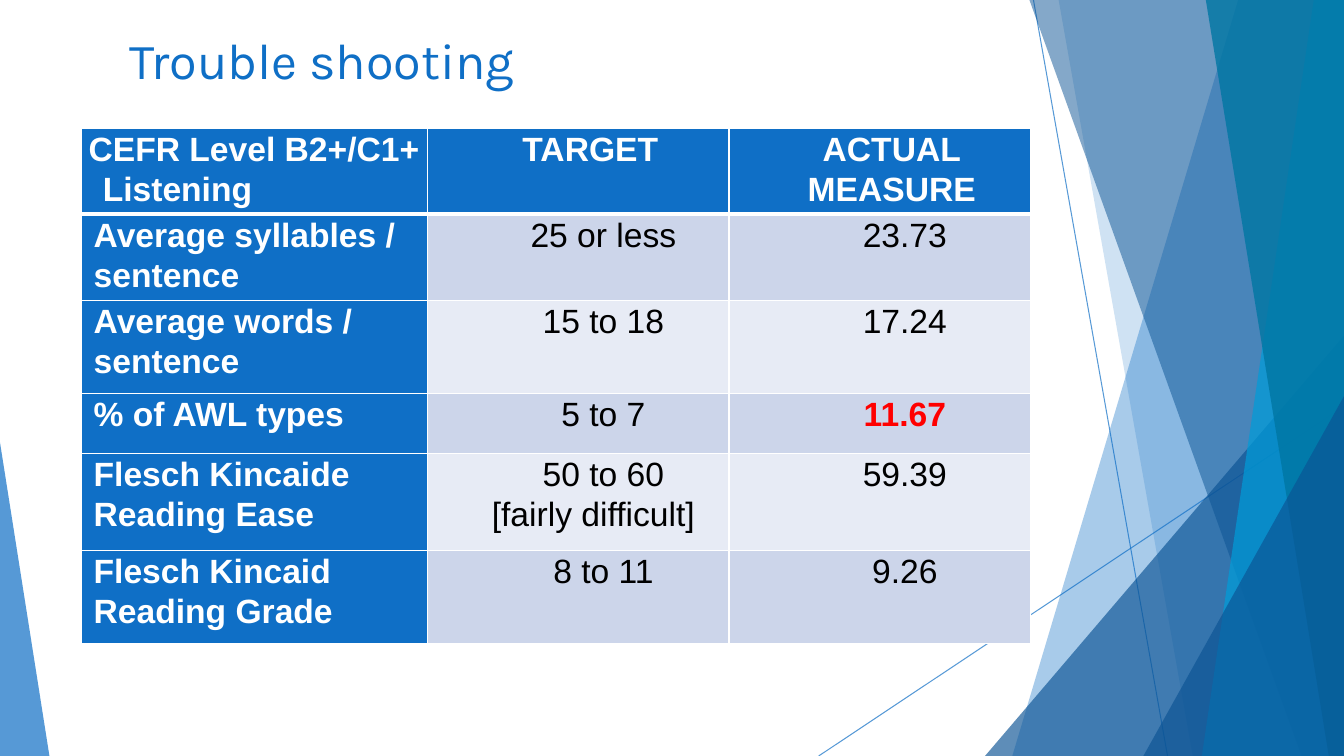
from dataclasses import dataclass

from lxml import etree
from pptx import Presentation
from pptx import util as u
from pptx.dml.color import RGBColor
from pptx.enum import shapes, text
from pptx.oxml import ns


@dataclass(frozen=True)
class Theme:
    """Colours, fonts and type sizes of the slide."""
    blue: str = "0F6FC6"
    navy: str = "0B5394"
    cyan: str = "009DD9"
    teal: str = "0076A3"
    white: str = "FFFFFF"
    black: str = "000000"
    alert: str = "FF0000"
    bands: tuple = ("CCD5EA", "E7EBF5")
    title_font: str = "Karla"
    table_font: str = "Arial"
    title_size: int = 36
    table_size: int = 24
    line_spacing: float = 1.07


class SlideBuilder:
    """Draws styled elements on one slide."""

    def __init__(self, theme, slide, width, height):
        self.theme, self.slide = theme, slide
        self.width, self.height = width, height

    def set_alpha(self, element, percent):
        """Make the solid colour inside an element see-through."""
        colour = element.find(".//" + ns.qn("a:srgbClr"))
        etree.SubElement(colour, ns.qn("a:alpha"), val=str(percent * 1000))

    def paint(self, shape, colour, alpha):
        """Give a shape a see-through fill and no outline."""
        shape.shadow.inherit = False
        shape.fill.solid()
        shape.fill.fore_color.rgb = RGBColor.from_string(colour)
        shape.line.fill.background()
        self.set_alpha(shape.fill._xPr, alpha)

    def ray(self, start, end):
        """Draw a thin line."""
        ends = [u.Inches(value) for value in (*start, *end)]
        ray = self.slide.shapes.add_connector(shapes.MSO_CONNECTOR.STRAIGHT, *ends)
        ray.line.width = u.Pt(0.75)
        ray.line.color.rgb = RGBColor.from_string(self.theme.blue)
        self.set_alpha(ray.line._ln, 70)
        etree.SubElement(ray._element.spPr, ns.qn("a:effectLst"))

    def facet(self, top_left, bottom_left, colour, alpha):
        """Fill the area from a slanted left edge to the slide's right edge."""
        corners = [(top_left, 0), (self.width, 0),
                   (self.width, self.height), (bottom_left, self.height)]
        points = [(u.Inches(x), u.Inches(y)) for x, y in corners]
        outline = self.slide.shapes.build_freeform(*points[0])
        outline.add_line_segments(points[1:], close=True)
        self.paint(outline.convert_to_shape(), colour, alpha)

    def wedge(self, left, top, width, apex, colour, alpha):
        """Draw a triangle standing on the bottom edge."""
        wedge = self.slide.shapes.add_shape(
            shapes.MSO_SHAPE.ISOSCELES_TRIANGLE, u.Inches(left), u.Inches(top),
            u.Inches(width), u.Inches(self.height - top))
        wedge.adjustments[0] = apex
        self.paint(wedge, colour, alpha)

    def style_font(self, paragraph, name, size, colour, bold=False):
        """Set the font of a paragraph."""
        font = paragraph.font
        font.name, font.size, font.bold = name, u.Pt(size), bold
        font.color.rgb = RGBColor.from_string(colour)

    def title(self, words, left, top, width, height):
        """Write the heading."""
        heading = self.slide.shapes.add_textbox(
            *(u.Inches(value) for value in (left, top, width, height)))
        heading.text_frame.word_wrap = True
        heading.text_frame.text = words
        self.style_font(heading.text_frame.paragraphs[0], self.theme.title_font,
                        self.theme.title_size, self.theme.blue)

    def borders(self, cell, bottom):
        """Draw white borders round a cell."""
        properties = cell._tc.get_or_add_tcPr()
        for index, side in enumerate("LRTB"):
            width = u.Pt(bottom if side == "B" else 1)
            edge = etree.Element(ns.qn(f"a:ln{side}"), w=str(width))
            fill = etree.SubElement(edge, ns.qn("a:solidFill"))
            etree.SubElement(fill, ns.qn("a:srgbClr"), val=self.theme.white)
            properties.insert(index, edge)

    def cell(self, cell, lines, fill, colour, bold, centred, bottom):
        """Fill one cell with lines of (words, indent)."""
        cell.margin_left = cell.margin_right = u.Inches(0.07)
        cell.margin_top = cell.margin_bottom = 0
        cell.fill.solid()
        cell.fill.fore_color.rgb = RGBColor.from_string(fill)
        self.borders(cell, bottom)
        cell.text_frame.text = "\n".join(words for words, _ in lines)
        for paragraph, (_, indent) in zip(cell.text_frame.paragraphs, lines):
            paragraph.line_spacing = self.theme.line_spacing
            paragraph.alignment = text.PP_ALIGN.CENTER if centred else text.PP_ALIGN.LEFT
            margins = paragraph._p.get_or_add_pPr()
            margins.set("marL", str(u.Inches(indent)))
            margins.set("indent", "0")
            self.style_font(paragraph, self.theme.table_font, self.theme.table_size,
                            colour, bold)

    def table(self, rows, left, top, widths, heights, alerts):
        """Draw the table with a blue header row and label column."""
        theme = self.theme
        measures = self.slide.shapes.add_table(
            len(rows), len(widths), u.Inches(left), u.Inches(top),
            u.Inches(sum(widths)), u.Inches(sum(heights))).table
        for column, width in zip(measures.columns, widths):
            column.width = u.Inches(width)
        for r, (row, height) in enumerate(zip(rows, heights)):
            measures.rows[r].height = u.Inches(height)
            for c, lines in enumerate(row):
                heading, alert = r == 0 or c == 0, (r, c) in alerts
                fill = theme.blue if heading else theme.bands[(r - 1) % 2]
                colour = theme.white if heading else theme.alert if alert else theme.black
                self.cell(measures.cell(r, c), lines, fill, colour,
                          heading or alert, c > 0, 3 if r == 0 else 1)


def label(*lines):
    """Indent the lines of a row label."""
    return [(line, 0.05) for line in lines]


def header(*lines):
    """Indent the lines of a column header."""
    return [(line, 0.24) for line in lines]


def value(words):
    """Indent a value."""
    return [(words, 0.5)]


def main():
    """Build and save the slide."""
    theme = Theme()
    width, height = 13.33, 7.5
    deck = Presentation()
    deck.slide_width, deck.slide_height = u.Inches(width), u.Inches(height)
    page = SlideBuilder(theme, deck.slides.add_slide(deck.slide_layouts[6]), width, height)

    page.ray((10.25, 0), (11.58, height))
    page.ray((width, 4.03), (8.12, height))
    page.facet(12.28, 10.04, theme.blue, 36)
    page.facet(10.5, 11.83, theme.blue, 20)
    page.wedge(9.77, 3.33, 3.56, 1, theme.navy, 66)
    page.facet(10.21, 12.91, theme.navy, 50)
    page.facet(13.03, 11.92, theme.cyan, 70)
    page.facet(11.96, 13.18, theme.teal, 80)
    page.wedge(11.34, 3.93, 1.99, 1, theme.navy, 66)
    page.wedge(0, 4.39, 0.49, 0, theme.blue, 70)

    page.title("Trouble shooting", 1.19, 0.24, 7.87, 0.71)
    rows = [
        ([("CEFR Level B2+/C1+", 0), ("Listening", 0.14)],
         header("TARGET"), header("ACTUAL", "MEASURE")),
        (label("Average syllables / sentence"), value("25 or less"), value("23.73")),
        (label("Average words /", "sentence"), value("15 to 18"), value("17.24")),
        (label("% of AWL types"), value("5 to 7"), value("11.67")),
        (label("Flesch Kincaide", "Reading Ease"),
         value("50 to 60") + [("[fairly difficult]", 0.3)], value("59.39")),
        (label("Flesch Kincaid", "Reading Grade"), value("8 to 11"), value("9.26")),
    ]
    page.table(rows, 0.81, 1.27, (3.43, 2.99, 2.99),
               (0.66, 0.58, 0.92, 0.6, 0.96, 0.92), alerts={(3, 2)})
    deck.save("out.pptx")


if __name__ == "__main__":
    main()
